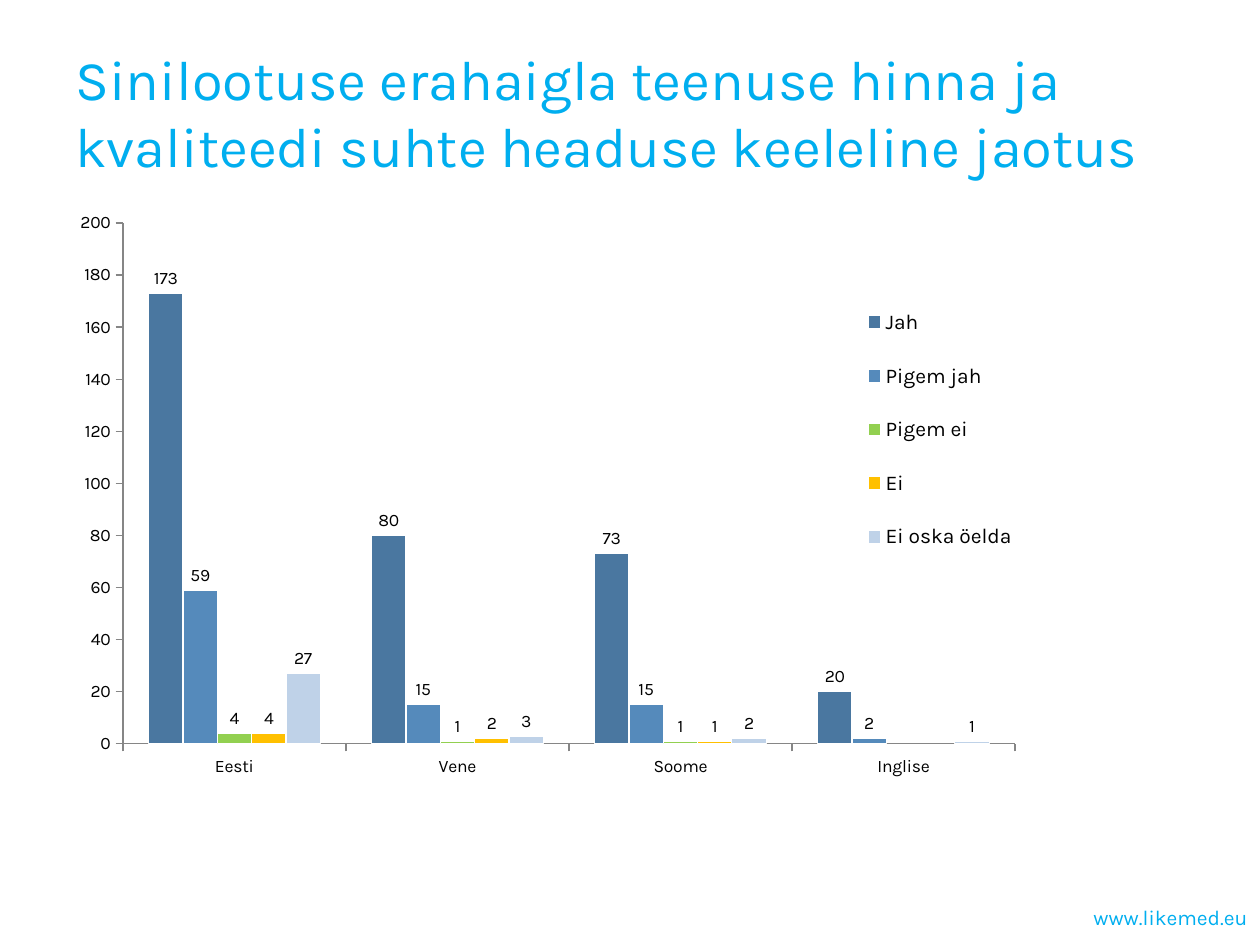
from dataclasses import dataclass

from lxml import etree
from pptx import Presentation
from pptx.chart.data import CategoryChartData
from pptx.dml.color import RGBColor
from pptx.enum.chart import XL_CHART_TYPE, XL_LABEL_POSITION, XL_LEGEND_POSITION, XL_TICK_MARK
from pptx.enum.text import MSO_ANCHOR, PP_ALIGN
from pptx.oxml.ns import qn
from pptx.util import Pt

LEFT, RIGHT = PP_ALIGN.LEFT, PP_ALIGN.RIGHT
MIDDLE = MSO_ANCHOR.MIDDLE
COLUMNS = XL_CHART_TYPE.COLUMN_CLUSTERED
LEGEND_RIGHT = XL_LEGEND_POSITION.RIGHT
LABEL_ABOVE = XL_LABEL_POSITION.OUTSIDE_END
TICK_OUT, TICK_NONE = XL_TICK_MARK.OUTSIDE, XL_TICK_MARK.NONE


@dataclass(frozen=True)
class Theme:
    font: str = "Karla"
    accent: str = "00AEEF"
    ink: str = "000000"
    axis: str = "868686"
    edge: str = "FFFFFF"
    title_size: int = 32
    small_size: int = 12
    chart_size: int = 10
    bars: tuple = ("4A77A0", "558ABB", "92D050", "FFC000", "BFD2E8")


theme = Theme()
PX = 914400 / 126
CHART_BOX = (58, 202, 1148, 586)


def add_text(text, area, size, align):
    box = page.shapes.add_textbox(*(round(value * PX) for value in area))
    frame = box.text_frame
    frame.word_wrap = True
    frame.vertical_anchor = MIDDLE
    para = frame.paragraphs[0]
    para.alignment = align
    span = para.add_run()
    span.text = text
    span.font.name = theme.font
    span.font.size = Pt(size)
    span.font.color.rgb = RGBColor.from_string(theme.accent)


def set_layout(parent, index, area, inner=False):
    for old in parent.findall(qn("c:layout")):
        parent.remove(old)
    layout = etree.Element(qn("c:layout"))
    manual = etree.SubElement(layout, qn("c:manualLayout"))
    left, top, width, height = area
    frame_left, frame_top, frame_width, frame_height = CHART_BOX
    settings = [("layoutTarget", "inner")] if inner else []
    settings += [("xMode", "edge"), ("yMode", "edge")]
    settings += [
        ("x", (left - frame_left) / frame_width),
        ("y", (top - frame_top) / frame_height),
        ("w", width / frame_width),
        ("h", height / frame_height),
    ]
    for name, value in settings:
        etree.SubElement(manual, qn(f"c:{name}")).set("val", str(value))
    parent.insert(index, layout)


deck = Presentation()
deck.slide_width = round(1260 * PX)
deck.slide_height = round(945 * PX)
page = deck.slides.add_slide(deck.slide_layouts[6])

add_text(
    "Sinilootuse erahaigla teenuse hinna ja kvaliteedi suhte headuse keeleline jaotus",
    (63, 10, 1134, 203), theme.title_size, LEFT,
)
add_text("www.likemed.eu", (861, 892, 399, 50), theme.small_size, RIGHT)

answers = {
    "Jah": (173, 80, 73, 20),
    "Pigem jah": (59, 15, 15, 2),
    "Pigem ei": (4, 1, 1, None),
    "Ei": (4, 2, 1, None),
    "Ei oska öelda": (27, 3, 2, 1),
}
data = CategoryChartData()
data.categories = ["Eesti", "Vene", "Soome", "Inglise"]
for answer, counts in answers.items():
    data.add_series(answer, counts)

chart = page.shapes.add_chart(COLUMNS, *(round(value * PX) for value in CHART_BOX), data).chart
chart.has_title = False
chart.font.name = theme.font
chart.font.size = Pt(theme.chart_size)
chart.font.color.rgb = RGBColor.from_string(theme.ink)

plot = chart.plots[0]
plot.vary_by_categories = False
plot.gap_width = 150
plot.overlap = 0
for series, color in zip(plot.series, theme.bars):
    series.invert_if_negative = False
    series.format.fill.solid()
    series.format.fill.fore_color.rgb = RGBColor.from_string(color)
    series.format.line.color.rgb = RGBColor.from_string(theme.edge)
    series.format.line.width = Pt(0.75)
    series.data_labels.show_value = True
    series.data_labels.position = LABEL_ABOVE

for axis in (chart.category_axis, chart.value_axis):
    axis.has_major_gridlines = False
    axis.major_tick_mark = TICK_OUT
    axis.minor_tick_mark = TICK_NONE
    axis.format.line.color.rgb = RGBColor.from_string(theme.axis)
    axis.format.line.width = Pt(0.75)
chart.value_axis.minimum_scale = 0
chart.value_axis.maximum_scale = 200
chart.value_axis.major_unit = 20

chart.has_legend = True
legend = chart.legend
legend.position = LEGEND_RIGHT
legend.include_in_layout = False
legend.font.name = theme.font
legend.font.size = Pt(theme.small_size)
legend.font.color.rgb = RGBColor.from_string(theme.ink)

chart_root = chart.element
set_layout(chart_root.find(".//" + qn("c:plotArea")), 0, (123, 223, 892, 521), inner=True)
set_layout(chart_root.find(".//" + qn("c:legend")), 1, (862, 281, 156, 297))

deck.save("out.pptx")
